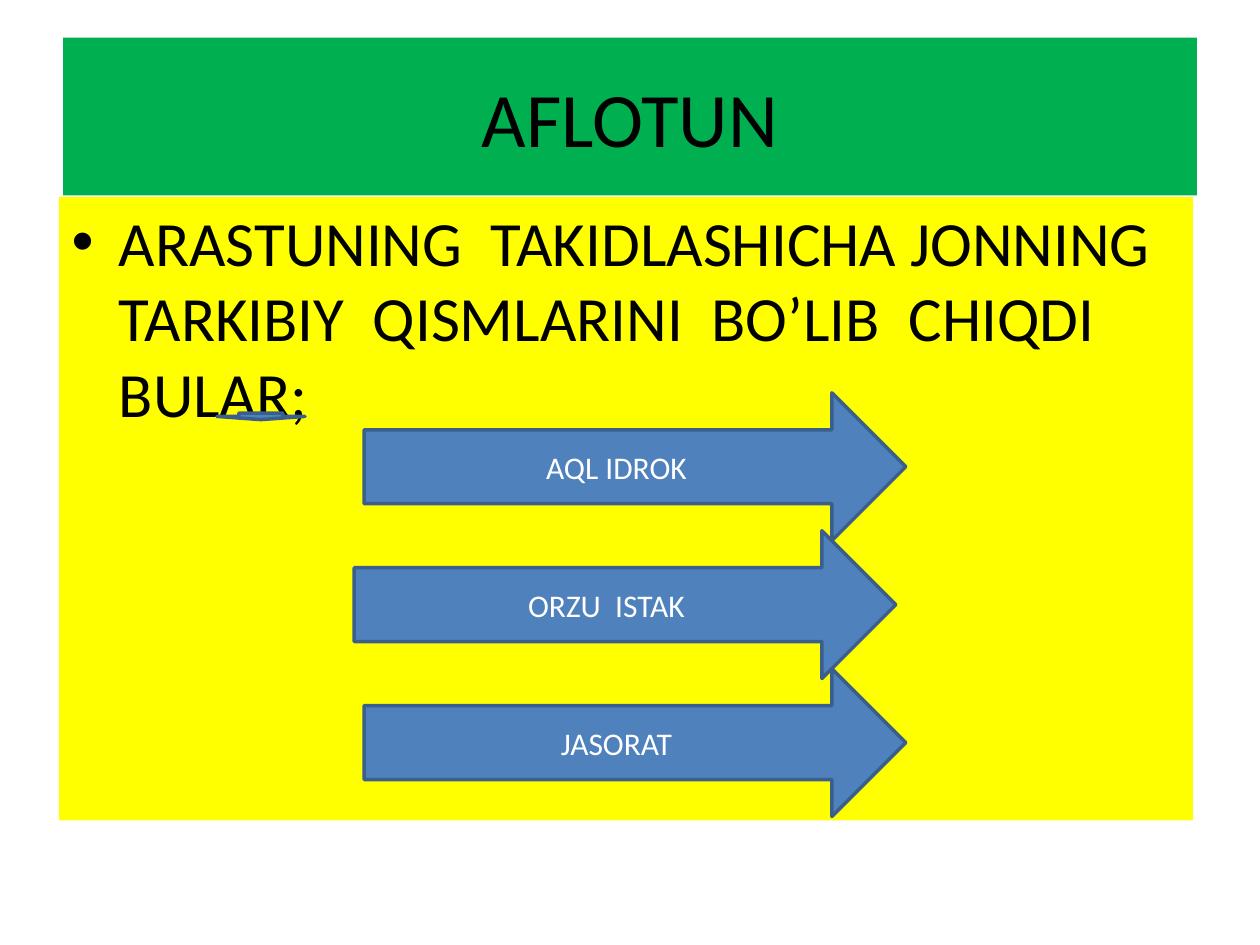
"""Build the AFLOTUN slide with a title, a bullet and labelled arrows."""
from pptx import Presentation
from pptx.dml.color import RGBColor
from pptx.enum.shapes import MSO_SHAPE
from pptx.enum.text import MSO_ANCHOR, MSO_AUTO_SIZE, PP_ALIGN
from pptx.util import Cm, Pt

RIGHT_ARROW, DOWN_ARROW = MSO_SHAPE.RIGHT_ARROW, MSO_SHAPE.DOWN_ARROW
MIDDLE, TOP = MSO_ANCHOR.MIDDLE, MSO_ANCHOR.TOP
CENTER, LEFT = PP_ALIGN.CENTER, PP_ALIGN.LEFT
NO_AUTOFIT = MSO_AUTO_SIZE.NONE

GREEN = RGBColor(0x00, 0xB0, 0x50)
YELLOW = RGBColor(0xFF, 0xFF, 0x00)
BLUE = RGBColor(0x4F, 0x81, 0xBD)
DARK_BLUE = RGBColor(0x3A, 0x5F, 0x8C)
BLACK = RGBColor(0x00, 0x00, 0x00)
WHITE = RGBColor(0xFF, 0xFF, 0xFF)


def write(shape, text, size, color, align, anchor):
    tf = shape.text_frame
    tf.text = text
    tf.word_wrap = True
    tf.auto_size = NO_AUTOFIT
    tf.vertical_anchor = anchor
    p = tf.paragraphs[0]
    p.alignment = align
    font = p.runs[0].font
    font.name, font.size, font.color.rgb = "Calibri", Pt(size), color


def add_arrow(kind, left, top, width, height):
    arrow = s.shapes.add_shape(kind, Cm(left), Cm(top), Cm(width), Cm(height))
    arrow.shadow.inherit = False
    arrow.fill.solid()
    arrow.fill.fore_color.rgb = BLUE
    arrow.line.color.rgb = DARK_BLUE
    arrow.line.width = Pt(2)
    return arrow


prs = Presentation()
prs.slide_width, prs.slide_height = Cm(25.4), Cm(19.05)
s = prs.slides.add_slide(prs.slide_layouts[1])

title, body = s.shapes.title, s.placeholders[1]
for sp, left, top, height, color in (
    (title, 1.27, 0.76, 3.18, GREEN),
    (body, 1.19, 3.97, 12.57, YELLOW),
):
    sp.left, sp.top, sp.width, sp.height = Cm(left), Cm(top), Cm(22.86), Cm(height)
    sp.fill.solid()
    sp.fill.fore_color.rgb = color

write(title, "AFLOTUN", 44, BLACK, CENTER, MIDDLE)
write(
    body,
    "ARASTUNING  TAKIDLASHICHA JONNING  TARKIBIY  QISMLARINI  BO’LIB  CHIQDI BULAR;",
    36, BLACK, LEFT, TOP,
)

add_arrow(DOWN_ARROW, 4.37, 8.33, 1.78, 0.13)

labels = (("AQL IDROK", 7.34), ("ORZU  ISTAK", 7.14), ("JASORAT", 7.34))
for i, (label, left) in enumerate(labels):
    arrow = add_arrow(RIGHT_ARROW, left, 7.92 + 2.78 * i, 10.92, 2.98)
    write(arrow, label, 18, WHITE, CENTER, MIDDLE)

prs.save("out.pptx")
